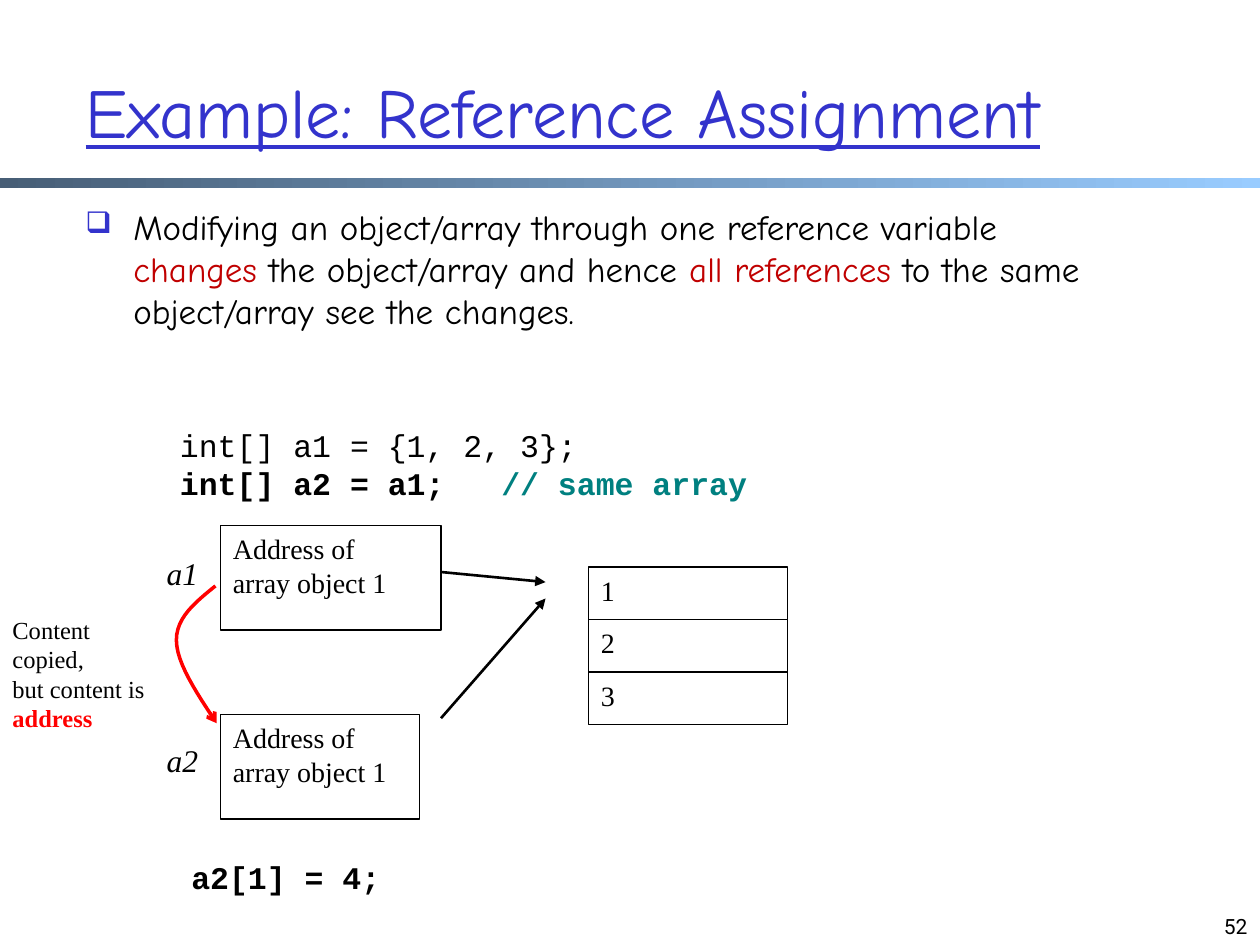
from dataclasses import dataclass

from lxml.etree import SubElement
from pptx import Presentation
from pptx.dml.color import RGBColor
from pptx.enum.shapes import MSO_CONNECTOR, MSO_SHAPE
from pptx.enum.text import MSO_ANCHOR, MSO_AUTO_SIZE, PP_ALIGN
from pptx.oxml.ns import qn
from pptx.util import Inches, Pt


@dataclass(frozen=True)
class Theme:
    blue: RGBColor = RGBColor(0x33, 0x33, 0xCC)
    black: RGBColor = RGBColor(0, 0, 0)
    white: RGBColor = RGBColor(255, 255, 255)
    crimson: RGBColor = RGBColor(0xC0, 0, 0)
    red: RGBColor = RGBColor(255, 0, 0)
    teal: RGBColor = RGBColor(0, 0x80, 0x80)
    slate: RGBColor = RGBColor(0x47, 0x5E, 0x76)
    sky: RGBColor = RGBColor(0x99, 0xCC, 0xFF)
    heading: str = "Comic Neue"
    code: str = "Courier New"
    diagram: str = "Times New Roman"
    number: str = "Roboto"
    title_size: Pt = Pt(40)
    body_size: Pt = Pt(20)
    code_size: Pt = Pt(18)
    box_size: Pt = Pt(16)
    note_size: Pt = Pt(14)
    number_size: Pt = Pt(12)


theme = Theme()


def write(paragraph, runs, font, size, color=theme.black, align=PP_ALIGN.LEFT):
    paragraph.alignment = align
    paragraph.font.name, paragraph.font.size = font, size
    paragraph.font.color.rgb = color
    for text, accent in runs:
        for index, line in enumerate(text.split("\n")):
            if index:
                paragraph.add_line_break()
            if line:
                run = paragraph.add_run()
                run.text = line
                if accent:
                    run.font.color.rgb = accent
    return paragraph


def add_arrowhead(line_shape, color, width, head):
    line_shape.line.color.rgb = color
    line_shape.line.width = width
    SubElement(line_shape.line._get_or_add_ln(), qn("a:tailEnd"), type=head)


prs = Presentation()
prs.slide_width, prs.slide_height = Inches(10), Inches(7.5)
slide = prs.slides.add_slide(prs.slide_layouts[5])
shapes = slide.shapes

divider = shapes.add_shape(MSO_SHAPE.RECTANGLE, 0, Inches(1.41), Inches(10), Inches(0.08))
divider.shadow.inherit = False
divider.line.fill.background()
divider.fill.gradient()
divider.fill.gradient_angle = 0
for stop, color in zip(divider.fill.gradient_stops, (theme.slate, theme.sky)):
    stop.color.rgb = color

title = shapes.title
title.left, title.top = Inches(0.58), Inches(0.25)
title.width, title.height = Inches(9), Inches(1.25)
title.text_frame.auto_size = MSO_AUTO_SIZE.NONE
title.text_frame.vertical_anchor = MSO_ANCHOR.MIDDLE
heading = write(title.text_frame.paragraphs[0], [("Example: Reference Assignment", None)],
                theme.heading, theme.title_size, theme.blue)
heading.font.underline = True

body = shapes.add_textbox(Inches(0.58), Inches(1.58), Inches(8.5), Inches(5.08))
body.text_frame.word_wrap = True
point = write(body.text_frame.paragraphs[0], [
    ("Modifying an object/array through one reference variable ", None),
    ("changes", theme.crimson),
    (" the object/array and hence ", None),
    ("all references ", theme.crimson),
    ("to the same object/array see the changes.", None),
], theme.heading, theme.body_size)
point.space_before = Pt(4)
bullet = point._p.get_or_add_pPr()
bullet.set("marL", str(Inches(0.38)))
bullet.set("indent", str(Inches(-0.38)))
defaults = bullet.find(qn("a:defRPr"))
bullet_color = SubElement(bullet, qn("a:buClr"))
SubElement(bullet_color, qn("a:srgbClr"), val=str(theme.blue))
SubElement(bullet, qn("a:buSzPct"), val="85000")
SubElement(bullet, qn("a:buChar"), char="❑")
bullet.append(defaults)

declarations = shapes.add_textbox(Inches(0.83), Inches(3.33), Inches(8.17), Inches(0.71))
declarations.text_frame.word_wrap = True
first = write(declarations.text_frame.paragraphs[0], [("int[] a1 = {1, 2, 3};", None)],
              theme.code, theme.code_size)
second = write(declarations.text_frame.add_paragraph(),
               [("int[] a2 = a1;   ", None), ("// same array", theme.teal)],
               theme.code, theme.code_size)
second.font.bold = True
for statement in (first, second):
    statement._p.get_or_add_pPr().set("marL", str(Inches(0.5)))

update = shapes.add_textbox(Inches(1.42), Inches(6.76), Inches(5.83), Inches(0.4))
update.text_frame.word_wrap = True
write(update.text_frame.paragraphs[0], [("a2[1] = 4;", None)],
      theme.code, theme.code_size).font.bold = True

for name, top in (("a1", 4.35), ("a2", 5.83)):
    variable = shapes.add_textbox(Inches(0.42), Inches(top), Inches(1.25), Inches(0.49))
    variable.text_frame.word_wrap = True
    label = write(variable.text_frame.paragraphs[0], [(name, None)],
                  theme.diagram, theme.code_size, align=PP_ALIGN.RIGHT)
    label.font.italic = True
    label.space_before = Pt(3.6)

boxes = [
    ("Address of \narray object 1", 1.75, 4.17, 1.75, 0.83),
    ("Address of array object 1", 1.75, 5.67, 1.58, 0.83),
]
boxes += [(str(i + 1), 4.67, 4.5 + i * 1.25 / 3, 1.58, 1.25 / 3) for i in range(3)]
for text, *bounds in boxes:
    box = shapes.add_shape(MSO_SHAPE.RECTANGLE, *map(Inches, bounds))
    box.shadow.inherit = False
    box.fill.solid()
    box.fill.fore_color.rgb = theme.white
    box.line.color.rgb = theme.black
    box.line.width = Pt(1)
    box.text_frame.word_wrap = True
    box.text_frame.vertical_anchor = MSO_ANCHOR.TOP
    write(box.text_frame.paragraphs[0], [(text, None)], theme.diagram, theme.box_size)

for start_y, end_y in ((4.54, 4.62), (5.7, 4.75)):
    reference = shapes.add_connector(MSO_CONNECTOR.STRAIGHT, Inches(3.5), Inches(start_y),
                                     Inches(4.33), Inches(end_y))
    add_arrowhead(reference, theme.black, Pt(1.5), "triangle")
    SubElement(reference._element.spPr, qn("a:effectLst"))

curves = [
    ((1.71, 4.65), (1.55, 4.78), (1.4, 4.9), (1.4, 5.08)),
    ((1.4, 5.08), (1.4, 5.26), (1.56, 5.5), (1.72, 5.74)),
]
steps = 12
curve_points = []
for curve in curves:
    for step in range(1, steps + 1):
        t = step / steps
        weights = ((1 - t) ** 3, 3 * t * (1 - t) ** 2, 3 * t ** 2 * (1 - t), t ** 3)
        curve_points.append(tuple(
            Inches(sum(w * p[axis] for w, p in zip(weights, curve))) for axis in (0, 1)))
outline = shapes.build_freeform(Inches(1.71), Inches(4.65))
outline.add_line_segments(curve_points, close=False)
copy_arrow = outline.convert_to_shape()
copy_arrow.shadow.inherit = False
copy_arrow.fill.background()
add_arrowhead(copy_arrow, theme.red, Pt(2), "arrow")

note = shapes.add_textbox(0, Inches(4.83), Inches(1.42), Inches(1.04))
note.text_frame.word_wrap = True
remark = write(note.text_frame.paragraphs[0],
               [("Content copied,\nbut content is \n", None), ("address", theme.red)],
               theme.diagram, theme.note_size)
remark.runs[-1].font.bold = True

page = shapes.add_textbox(Inches(7.67), Inches(7), Inches(2.33), Inches(0.5))
page.text_frame.word_wrap = True
page.text_frame.vertical_anchor = MSO_ANCHOR.BOTTOM
write(page.text_frame.paragraphs[0], [("52", None)], theme.number, theme.number_size,
      align=PP_ALIGN.RIGHT)

prs.save("out.pptx")
